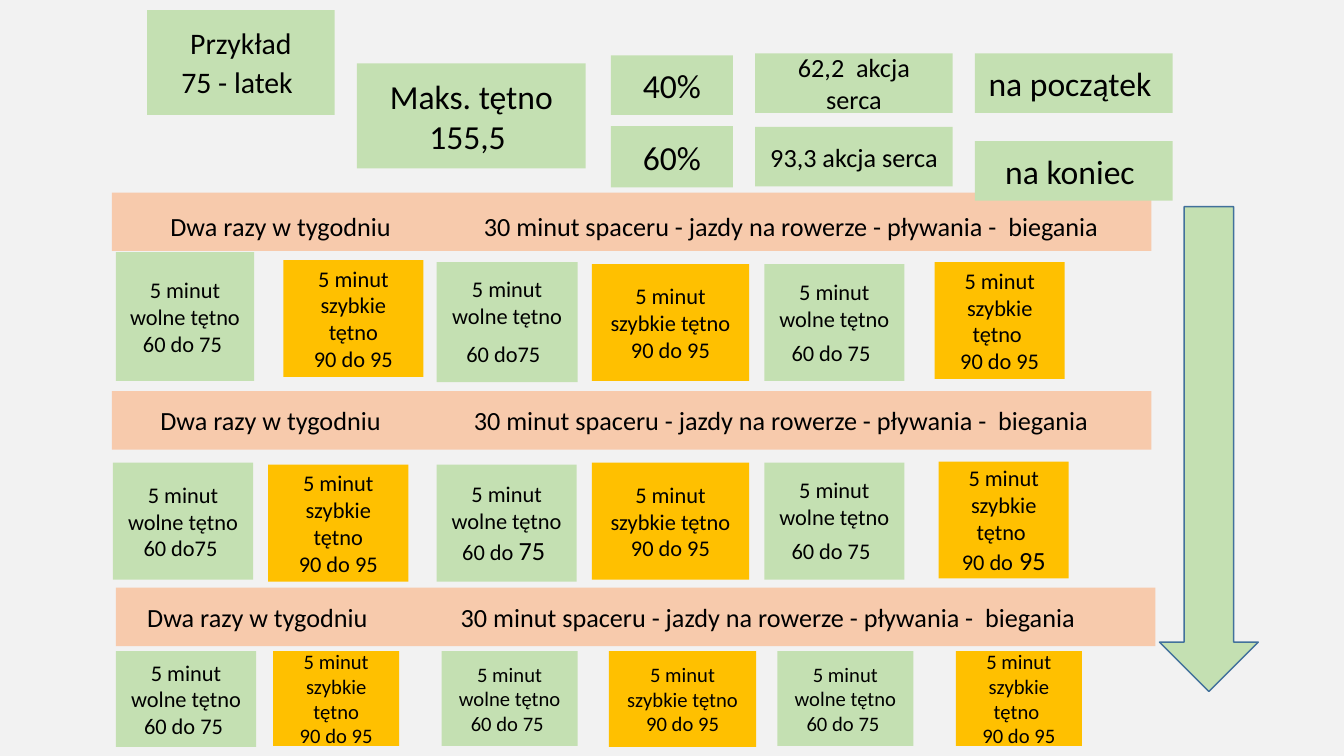
from dataclasses import dataclass

from lxml import etree
from pptx import Presentation, util as u
from pptx.dml.color import RGBColor
from pptx.enum import shapes, text
from pptx.oxml import ns

# Grid: 133.3 columns by 75 rows of square cells
SLIDE_WIDTH, SLIDE_HEIGHT = u.Inches(13.33), u.Inches(7.5)
COLUMN, ROW = SLIDE_WIDTH / 133.3, SLIDE_HEIGHT / 75
SIDE_INSET, TOP_INSET = 1.3, 0.7
ACTIVITY_TAB = 31.1
FONT = "Calibri"
COLORS = {
    "background": "F2F2F2",
    "green": "C4E0B2",
    "amber": "FFC000",
    "peach": "F7CAAC",
    "outline": "42719B",
    "text": "000000",
}


@dataclass(frozen=True)
class Part:
    words: str
    size: float


@dataclass(frozen=True)
class Area:
    left: float
    top: float
    width: float
    height: float


@dataclass(frozen=True)
class Label:
    area: Area
    size: float
    lines: tuple[tuple[Part | str, ...], ...]
    fill: str = "green"


@dataclass(frozen=True)
class Pace:
    fill: str
    effort: str
    pulse: str


@dataclass(frozen=True)
class Step:
    area: Area
    pace: Pace
    size: float = 16
    pulse: tuple[Part | str, ...] = ()


@dataclass(frozen=True)
class Banner:
    left: float
    top: float
    indent: float
    drop: float = 0


SLOW = Pace("green", "wolne tętno", "60 do 75 ")
FAST = Pace("amber", "szybkie tętno", "90 do 95")
FINISH = Pace("amber", "szybkie tętno ", "90 do 95")

SUMMARY = (
    Label(Area(14.6, 1, 18.6, 10.4), 21.3,
          (("Przykład",), ("75 - latek", Part(" ", 24)))),
    Label(Area(35.4, 6.3, 22.7, 10.4), 24, (("Maks. tętno 155,5 ",),)),
    Label(Area(60.6, 5.5, 12.1, 5.9), 24, (("40%",),)),
    Label(Area(60.6, 12.5, 12.1, 6.1), 24, (("60%",),)),
    Label(Area(74.9, 5.3, 19.6, 5.9), 18.7, (("62,2  akcja serca",),)),
    Label(Area(74.9, 12.6, 19.6, 5.9), 18.7, (("93,3 akcja serca ",),)),
    Label(Area(96.7, 5.3, 19.6, 5.9), 24, (("na początek ",),)),
    Label(Area(96.7, 14, 19.6, 5.9), 24, (("na koniec ",),)),
)

BANNERS = (
    Banner(11.1, 19.1, 4.5, drop=0.9),
    Banner(11.1, 38.8, 3.5),
    Banner(11.5, 58.3, 1.8),
)

STEPS = (
    # First stage
    Step(Area(11.5, 25, 13.7, 12.8), SLOW),
    Step(Area(28.1, 25.8, 13.9, 11.6), FAST),
    Step(Area(43.3, 26, 14, 11.9), SLOW, pulse=("60 do75", Part(" ", 24))),
    Step(Area(58.7, 26.2, 15.6, 11.6), FAST),
    Step(Area(75.8, 26.2, 13.9, 11.6), SLOW, pulse=("60 do 75", Part(" ", 21.3))),
    Step(Area(92.7, 26, 12.9, 11.6), FINISH),
    # Second stage
    Step(Area(11.2, 45.9, 13.9, 11.6), SLOW, pulse=("60 do75 ",)),
    Step(Area(26.6, 46.1, 13.9, 11.6), FAST),
    Step(Area(43.3, 46.1, 13.9, 11.6), SLOW, pulse=("60 do ", Part("75 ", 18.7))),
    Step(Area(58.7, 45.9, 15.6, 11.6), FAST),
    Step(Area(75.8, 45.9, 13.9, 11.6), SLOW, pulse=("60 do 75", Part(" ", 21.3))),
    Step(Area(93.1, 45.8, 12.9, 11.6), FINISH, pulse=("90 do", Part(" 95", 18.7))),
    # Third stage
    Step(Area(11.5, 64.6, 13.9, 9.5), SLOW),
    Step(Area(27.1, 64.6, 12.5, 9.4), FAST, 14.7),
    Step(Area(43.8, 64.6, 13.5, 9.4), SLOW, 14.7),
    Step(Area(60.4, 64.6, 14.6, 9.5), FAST, 14.7),
    Step(Area(77.1, 64.6, 13.5, 9.4), SLOW, 14.7),
    Step(Area(94.8, 64.6, 12.5, 9.4), FINISH, 14.7),
)


def color(name: str) -> RGBColor:
    return RGBColor.from_string(COLORS[name])


def columns(count: float) -> u.Emu:
    return u.Emu(round(count * COLUMN))


def rows(count: float) -> u.Emu:
    return u.Emu(round(count * ROW))


def draw_shape(slide, kind, area: Area, fill: str):
    shape = slide.shapes.add_shape(kind, columns(area.left), rows(area.top),
                                   columns(area.width), rows(area.height))
    shape.shadow.inherit = False
    shape.fill.solid()
    shape.fill.fore_color.rgb = color(fill)
    shape.line.fill.background()
    return shape


def draw_label(slide, label: Label, align=text.PP_ALIGN.CENTER):
    box = draw_shape(slide, shapes.MSO_SHAPE.RECTANGLE, label.area, label.fill)
    frame = box.text_frame
    frame.word_wrap = True
    frame.vertical_anchor = text.MSO_ANCHOR.MIDDLE
    frame.margin_left = frame.margin_right = columns(SIDE_INSET)
    frame.margin_top = frame.margin_bottom = rows(TOP_INSET)
    for index, line in enumerate(label.lines):
        paragraph = frame.add_paragraph() if index else frame.paragraphs[0]
        paragraph.alignment = align
        paragraph.font.name = FONT
        paragraph.font.size = u.Pt(label.size)
        paragraph.font.color.rgb = color("text")
        for part in line:
            run = paragraph.add_run()
            if isinstance(part, Part):
                run.text = part.words
                run.font.size = u.Pt(part.size)
            else:
                run.text = part
    return frame


def draw_banner(slide, banner: Banner) -> None:
    words = ("Dwa razy w tygodniu\t"
             "30 minut spaceru - jazdy na rowerze - pływania -  biegania")
    area = Area(banner.left, banner.top, 103.1, 5.8)
    frame = draw_label(slide, Label(area, 18.7, ((words,),), "peach"),
                       text.PP_ALIGN.LEFT)
    frame.margin_left = columns(SIDE_INSET + banner.indent)
    frame.margin_top = rows(TOP_INSET + banner.drop)
    # The tab stop precedes the default run properties
    properties = frame.paragraphs[0]._p.get_or_add_pPr()
    stops = etree.Element(ns.qn("a:tabLst"))
    etree.SubElement(stops, ns.qn("a:tab"), pos=str(columns(ACTIVITY_TAB)), algn="l")
    properties.find(ns.qn("a:defRPr")).addprevious(stops)


def draw_step(slide, step: Step) -> None:
    pulse = step.pulse or (step.pace.pulse,)
    lines = (("5 minut",), (step.pace.effort,), pulse)
    draw_label(slide, Label(step.area, step.size, lines, step.pace.fill))


def main() -> None:
    deck = Presentation()
    deck.slide_width, deck.slide_height = SLIDE_WIDTH, SLIDE_HEIGHT
    slide = deck.slides.add_slide(deck.slide_layouts[6])
    slide.background.fill.solid()
    slide.background.fill.fore_color.rgb = color("background")

    # Direction of progress
    progress = draw_shape(slide, shapes.MSO_SHAPE.DOWN_ARROW,
                          Area(115, 20.5, 9.8, 48.1), "green")
    progress.line.color.rgb = color("outline")
    progress.line.width = u.Pt(1)

    # Training stages
    for banner in BANNERS:
        draw_banner(slide, banner)
    for step in STEPS:
        draw_step(slide, step)

    # Heart rate summary
    for label in SUMMARY:
        draw_label(slide, label)

    deck.save("out.pptx")


if __name__ == "__main__":
    main()
